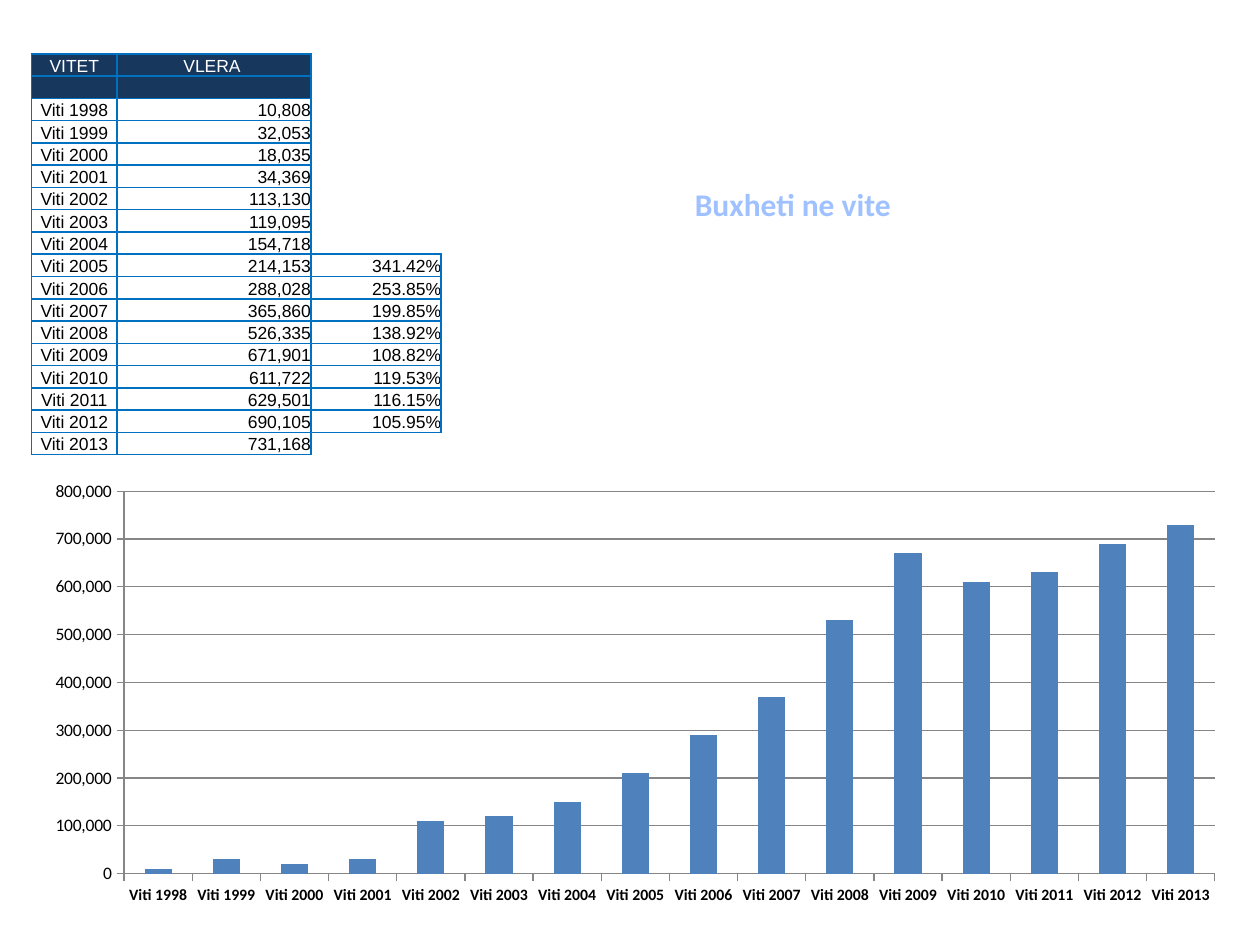
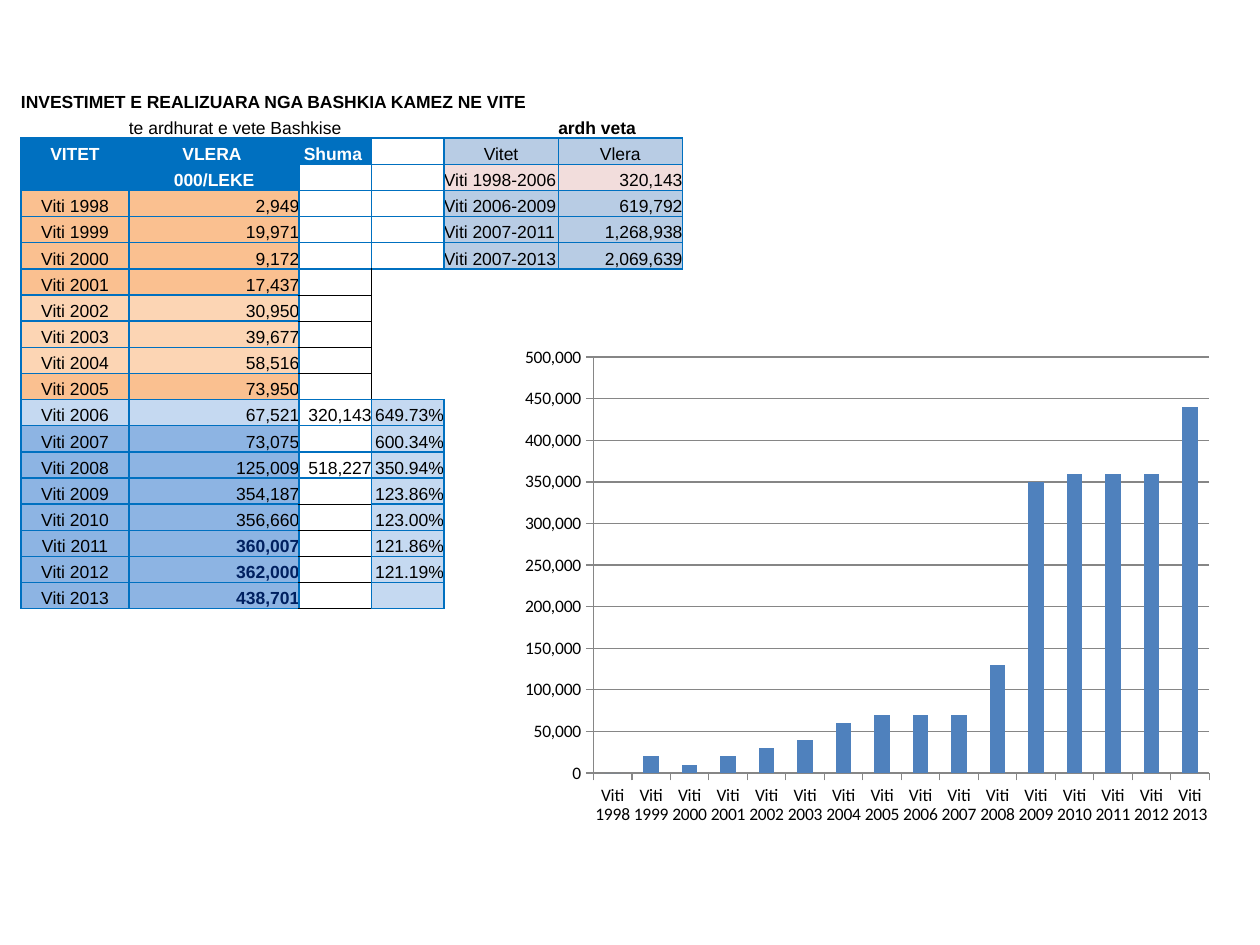
from lxml.etree import SubElement
from pptx import Presentation
from pptx.chart.data import CategoryChartData
from pptx.dml.color import RGBColor
from pptx.enum.chart import XL_CHART_TYPE as ChartType, XL_TICK_MARK as TickMark
from pptx.enum.text import MSO_ANCHOR as Anchor, PP_ALIGN as Align
from pptx.oxml import parse_xml
from pptx.oxml.ns import nsdecls, qn
from pptx.util import Pt

# Colours
WHITE = RGBColor(0xFF, 0xFF, 0xFF)
BLACK = RGBColor(0, 0, 0)
BLUE = RGBColor(0x00, 0x70, 0xC0)
NAVY = RGBColor(0x17, 0x37, 0x5D)
INK = RGBColor(0x00, 0x20, 0x60)
ORANGE = RGBColor(0xFA, 0xC0, 0x90)
PEACH = RGBColor(0xFC, 0xD5, 0xB4)
SKY = RGBColor(0xC5, 0xD9, 0xF1)
MID_BLUE = RGBColor(0x8D, 0xB4, 0xE3)
STEEL = RGBColor(0xB8, 0xCC, 0xE4)
PINK = RGBColor(0xF2, 0xDD, 0xDC)
BAR = RGBColor(0x4F, 0x81, 0xBD)
AXIS = RGBColor(0x86, 0x86, 0x86)
TITLE = RGBColor(0xA0, 0xC1, 0xFF)

# Content
YEARS = [f"Viti {year}" for year in range(1998, 2014)]
BUDGET = [10808, 32053, 18035, 34369, 113130, 119095, 154718, 214153,
          288028, 365860, 526335, 671901, 611722, 629501, 690105, 731168]
BUDGET_RATIOS = {"Viti 2005": "341.42%", "Viti 2006": "253.85%", "Viti 2007": "199.85%",
                 "Viti 2008": "138.92%", "Viti 2009": "108.82%", "Viti 2010": "119.53%",
                 "Viti 2011": "116.15%", "Viti 2012": "105.95%"}
INVESTMENT = [2949, 19971, 9172, 17437, 30950, 39677, 58516, 73950,
              67521, 73075, 125009, 354187, 356660, 360007, 362000, 438701]
SUMS = {"Viti 2006": "320,143", "Viti 2008": "518,227"}
INVESTMENT_RATIOS = {"Viti 2006": "649.73%", "Viti 2007": "600.34%", "Viti 2008": "350.94%",
                     "Viti 2009": "123.86%", "Viti 2010": "123.00%", "Viti 2011": "121.86%",
                     "Viti 2012": "121.19%"}
PERIODS = [("Vitet", "Vlera"), ("Viti 1998-2006", "320,143"), ("Viti 2006-2009", "619,792"),
           ("Viti 2007-2011", "1,268,938"), ("Viti 2007-2013", "2,069,639")]

BUDGET_ROWS = [["", "", ""], ["VITET", "VLERA ", ""], ["", "", ""]] + [
    [year, f"{value:,}", BUDGET_RATIOS.get(year, "")] for year, value in zip(YEARS, BUDGET)]
INVESTMENT_ROWS = [
    ["INVESTIMET E REALIZUARA NGA BASHKIA KAMEZ NE VITE", "", "", "", "", ""],
    ["", "te ardhurat e vete Bashkise", "", "", "", "ardh veta"],
    ["VITET", "VLERA ", "Shuma ", "", "", ""],
    ["", "000/LEKE", "", "", "", ""],
] + [[year, f"{value:,}", SUMS.get(year, ""), INVESTMENT_RATIOS.get(year, ""), "", ""]
     for year, value in zip(YEARS, INVESTMENT)]
for row, period in zip(INVESTMENT_ROWS[2:], PERIODS):
    row[4:] = period


# Cell looks: fill, font colour, bold
def budget_look(row, col):
    if col == 2 or row == 0:
        return None, BLACK, False
    return (NAVY, WHITE, False) if row < 3 else (WHITE, BLACK, False)


def investment_look(row, col):
    if row < 2:
        return None, BLACK, row == 0 or col == 5
    if (row < 4 and col < 2) or (row, col) == (2, 2):
        return BLUE, WHITE, True
    fill = None
    if col < 2:
        fill = (ORANGE if row < 8 or row == 11 else PEACH if row < 11
                else SKY if row == 12 else MID_BLUE)
    elif col == 3 and row > 11:
        fill = SKY
    elif col > 3 and row < 7:
        fill = PINK if row == 3 else STEEL
    late = col == 1 and row > 16
    return fill, INK if late else BLACK, late


# Cell frames: "blue", "thin" or none
def budget_frame(row, col):
    framed = 1 <= row <= 18 if col in (0, 1) else col == 2 and 10 <= row <= 17
    return "blue" if framed else None


def investment_frame(row, col):
    if not (2 <= row <= 19 and 0 <= col <= 5):
        return None
    if col < 2 or row < 7 or (col == 3 and row > 11) or (col == 2 and 12 <= row <= 14):
        return "blue"
    return "thin" if col == 2 else None


LINES = {"blue": (Pt(1), BLUE), "thin": (Pt(0.5), BLACK)}


def draw_borders(cell, row, col, frame):
    """A shared edge takes the stronger frame of its two cells."""
    neighbours = {"lnL": (row, col - 1), "lnR": (row, col + 1),
                  "lnT": (row - 1, col), "lnB": (row + 1, col)}
    props = cell._tc.get_or_add_tcPr()
    for order, (tag, neighbour) in enumerate(neighbours.items()):
        kinds = (frame(row, col), frame(*neighbour))
        kind = next((name for name in LINES if name in kinds), None)
        line = props.makeelement(qn(f"a:{tag}"), {})
        props.insert(order, line)
        if kind:
            width, color = LINES[kind]
            line.set("w", str(width))
            solid = SubElement(line, qn("a:solidFill"))
            SubElement(solid, qn("a:srgbClr"), val=str(color))
        else:
            SubElement(line, qn("a:noFill"))


def alignment(text, framed):
    if text.rstrip("%").replace(",", "").replace(".", "").isdigit():
        return Align.RIGHT
    return Align.CENTER if framed and "-" not in text else Align.LEFT


def add_grid(page, left, top, widths, heights, rows, look, frame, merges):
    table = page.shapes.add_table(len(rows), len(widths), left, top,
                                  sum(widths), sum(heights)).table
    table.first_row = table.horz_banding = False
    for column, width in zip(table.columns, widths):
        column.width = width
    for line, height in zip(table.rows, heights):
        line.height = height
    for r, row in enumerate(rows):
        for c, text in enumerate(row):
            cell = table.cell(r, c)
            fill, color, bold = look(r, c)
            cell.margin_left = cell.margin_right = cell.margin_top = cell.margin_bottom = 0
            cell.vertical_anchor = Anchor.BOTTOM
            if fill is None:
                cell.fill.background()
            else:
                cell.fill.solid()
                cell.fill.fore_color.rgb = fill
            draw_borders(cell, r, c, frame)
            para = cell.text_frame.paragraphs[0]
            if not text:
                SubElement(para._p, qn("a:endParaRPr"), sz="1000")
                continue
            para.text = text
            para.alignment = alignment(text, frame(r, c))
            font = para.runs[0].font
            font.name, font.size, font.bold = "Arial", Pt(10), bold
            font.color.rgb = color
    for row, first, last in merges:
        table.cell(row, first).merge(table.cell(row, last))


def add_columns(page, kind, place, inner, values, label_size, label_bold, overlap):
    """Place and inner plot area are (left, top, width, height) on the page."""
    data = CategoryChartData(number_format="#,##0")
    data.categories = YEARS
    data.add_series("Series 1", [round(value, -4) for value in values])
    chart = page.shapes.add_chart(kind, *map(Pt, place), data).chart
    chart.has_legend = chart.has_title = False
    chart.font.name, chart.font.size = "Calibri", Pt(10)
    chart.font.color.rgb = BLACK
    plot = chart.plots[0]
    plot.vary_by_categories = False
    plot.gap_width, plot.overlap = 150, overlap
    fill = plot.series[0].format.fill
    fill.solid()
    fill.fore_color.rgb = BAR
    # Axes and gridlines
    years, amounts = chart.category_axis, chart.value_axis
    for axis in (years, amounts):
        axis.major_tick_mark, axis.minor_tick_mark = TickMark.OUTSIDE, TickMark.NONE
        axis.format.line.color.rgb = AXIS
        axis.format.line.width = Pt(0.75)
        axis.tick_labels.font.size = Pt(10)
    years.tick_labels.font.size, years.tick_labels.font.bold = Pt(label_size), label_bold
    amounts.has_major_gridlines = True
    amounts.major_gridlines.format.line.color.rgb = AXIS
    amounts.major_gridlines.format.line.width = Pt(0.75)
    amounts.tick_labels.number_format = "#,##0"
    amounts.tick_labels.number_format_is_linked = False
    # Inner plot area as shares of the chart
    left, top, width, height = place
    shares = ((inner[0] - left) / width, (inner[1] - top) / height,
              inner[2] / width, inner[3] / height)
    area = chart.element.find(".//" + qn("c:plotArea"))
    for old in area.findall(qn("c:layout")):
        area.remove(old)
    modes = '<c:layoutTarget val="inner"/><c:xMode val="edge"/><c:yMode val="edge"/>'
    sizes = "".join(f'<c:{key} val="{share}"/>' for key, share in zip("xywh", shares))
    area.insert(0, parse_xml(f'<c:layout {nsdecls("c")}><c:manualLayout>{modes}{sizes}'
                             '</c:manualLayout></c:layout>'))


def main():
    deck = Presentation()
    deck.slide_width, deck.slide_height = Pt(720), Pt(540)
    blank = deck.slide_layouts[6]

    # Budget by year
    page = deck.slides.add_slide(blank)
    add_grid(page, Pt(18), Pt(18), [Pt(48.9), Pt(110.7), Pt(74.4)], [Pt(12.73)] * 19,
             BUDGET_ROWS, budget_look, budget_frame, [(0, 0, 2)])
    add_columns(page, ChartType.COLUMN_CLUSTERED, (18, 270, 690, 252),
                (70.9, 280.7, 623.3, 218.7), BUDGET, 9, True, 0)
    box = page.shapes.add_textbox(Pt(390), Pt(102), Pt(132), Pt(29))
    box.text_frame.word_wrap = True
    box.text_frame.text = "Buxheti ne vite"
    font = box.text_frame.paragraphs[0].runs[0].font
    font.name, font.size, font.bold = "Calibri", Pt(18), True
    font.color.rgb = TITLE

    # Investments by year
    page = deck.slides.add_slide(blank)
    add_grid(page, Pt(12), Pt(42), [Pt(w) for w in (61.7, 97.3, 41.3, 41.4, 65.4, 70.9)],
             [Pt(22)] + [Pt(14.96)] * 19, INVESTMENT_ROWS,
             investment_look, investment_frame, [(0, 0, 4), (1, 1, 2)])
    add_columns(page, ChartType.COLUMN_STACKED, (300, 198, 392, 296),
                (338.3, 204.1, 352.7, 237.7), INVESTMENT, 10, False, 100)

    deck.save("out.pptx")


if __name__ == "__main__":
    main()
